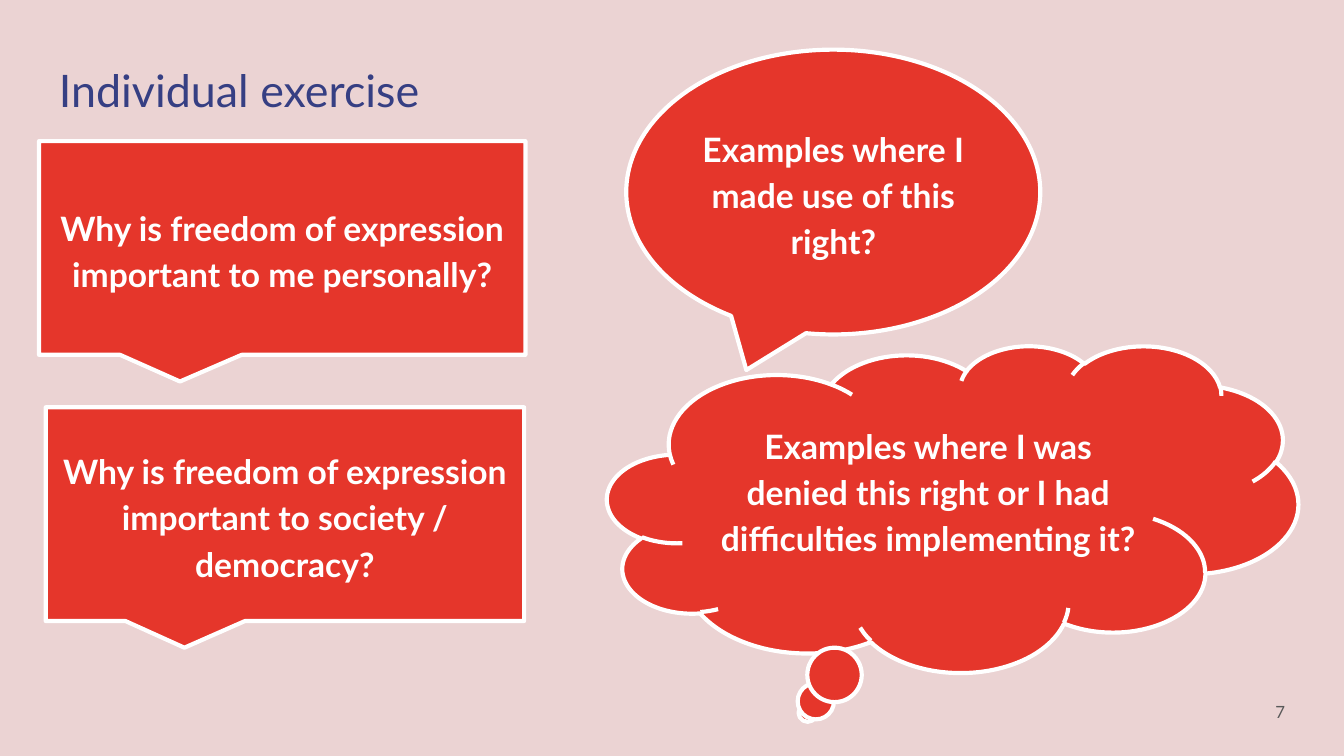
from pptx import Presentation
from pptx.dml.color import RGBColor
from pptx.enum.shapes import MSO_SHAPE
from pptx.enum.text import MSO_ANCHOR, PP_ALIGN
from pptx.util import Pt

ROUNDED = MSO_SHAPE.ROUNDED_RECTANGULAR_CALLOUT
RECTANGULAR = MSO_SHAPE.RECTANGULAR_CALLOUT
OVAL = MSO_SHAPE.OVAL_CALLOUT
CLOUD = MSO_SHAPE.CLOUD_CALLOUT
TOP, MIDDLE = MSO_ANCHOR.TOP, MSO_ANCHOR.MIDDLE
LEFT, CENTER, RIGHT = PP_ALIGN.LEFT, PP_ALIGN.CENTER, PP_ALIGN.RIGHT

PINK = RGBColor(0xEB, 0xD3, 0xD3)
RED = RGBColor(0xE5, 0x36, 0x2B)
WHITE = RGBColor(0xFF, 0xFF, 0xFF)
NAVY = RGBColor(0x36, 0x3F, 0x83)
GREY = RGBColor(0x59, 0x59, 0x59)

INSET = 7.2
POINTER = (-0.21, 0.625)


def write(frame, text, size, color, bold=False, align=LEFT, anchor=TOP,
          line_spacing=1.0, bottom=INSET):
    frame.word_wrap = True
    frame.vertical_anchor = anchor
    frame.margin_left = frame.margin_right = frame.margin_top = Pt(INSET)
    frame.margin_bottom = Pt(bottom)
    paragraph = frame.paragraphs[0]
    paragraph.alignment = align
    paragraph.line_spacing = line_spacing
    run = paragraph.add_run()
    run.text = text
    run.font.name = "Lato"
    run.font.size = Pt(size)
    run.font.bold = bold
    run.font.color.rgb = color


class ExerciseSlide:
    def __init__(self, deck):
        self.slide = deck.slides.add_slide(deck.slide_layouts[6])
        background = self.slide.background.fill
        background.solid()
        background.fore_color.rgb = PINK

    def label(self, text, box, **style):
        label = self.slide.shapes.add_textbox(*map(Pt, box))
        write(label.text_frame, text, **style)

    def callout(self, preset, text, box, bottom=INSET):
        callout = self.slide.shapes.add_shape(preset, *map(Pt, box))
        callout.shadow.inherit = False
        callout.fill.solid()
        callout.fill.fore_color.rgb = RED
        callout.line.color.rgb = WHITE
        callout.line.width = Pt(2.25)
        for index, value in enumerate(POINTER):
            callout.adjustments[index] = value
        if preset == ROUNDED:
            callout.adjustments[2] = 0  # square corners
        write(callout.text_frame, text, size=18, color=WHITE, bold=True,
              align=CENTER, anchor=MIDDLE, line_spacing=1.15, bottom=bottom)


def main():
    deck = Presentation()
    deck.slide_width, deck.slide_height = Pt(720), Pt(405)
    exercise = ExerciseSlide(deck)

    # Title and page number
    exercise.label("Individual exercise", (24.5, 26.6, 260.6, 45.4),
                   size=24, color=NAVY)
    exercise.label("7", (652.3, 365.8, 43.2, 31),
                   size=9, color=GREY, align=RIGHT, anchor=MIDDLE)

    # Questions on the left, examples on the right
    exercise.callout(
        ROUNDED, "Why is freedom of expression important to me personally?",
        (20.9, 75.6, 260.6, 114.5))
    exercise.callout(
        OVAL, "Examples where I made use of this right?",
        (335.5, 26.6, 221.8, 152.6))
    exercise.callout(
        CLOUD, "Examples where I was denied this right or I had "
        "difficulties implementing it?",
        (325.4, 185, 370.1, 175), bottom=20)
    exercise.callout(
        RECTANGULAR,
        "Why is freedom of expression important to society / democracy?",
        (24.5, 218.2, 256.3, 114.5))

    deck.save("out.pptx")


if __name__ == "__main__":
    main()
